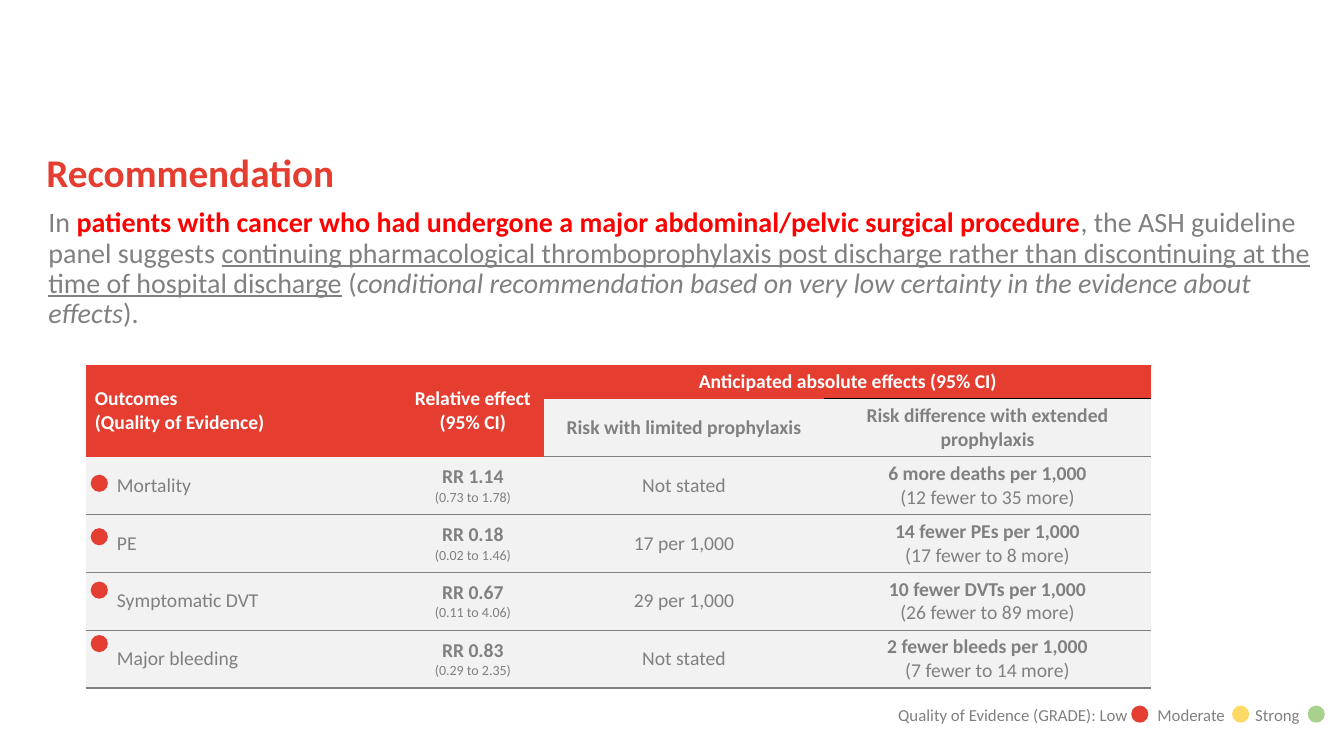
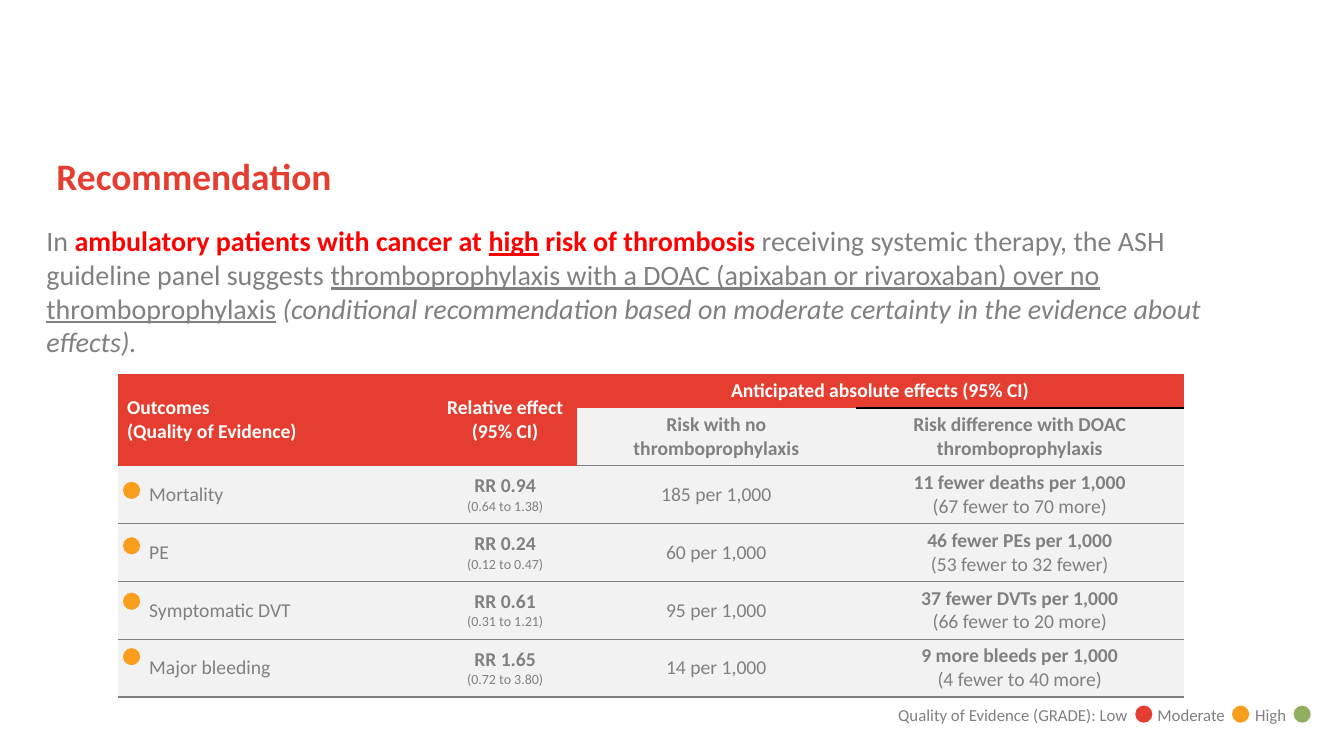
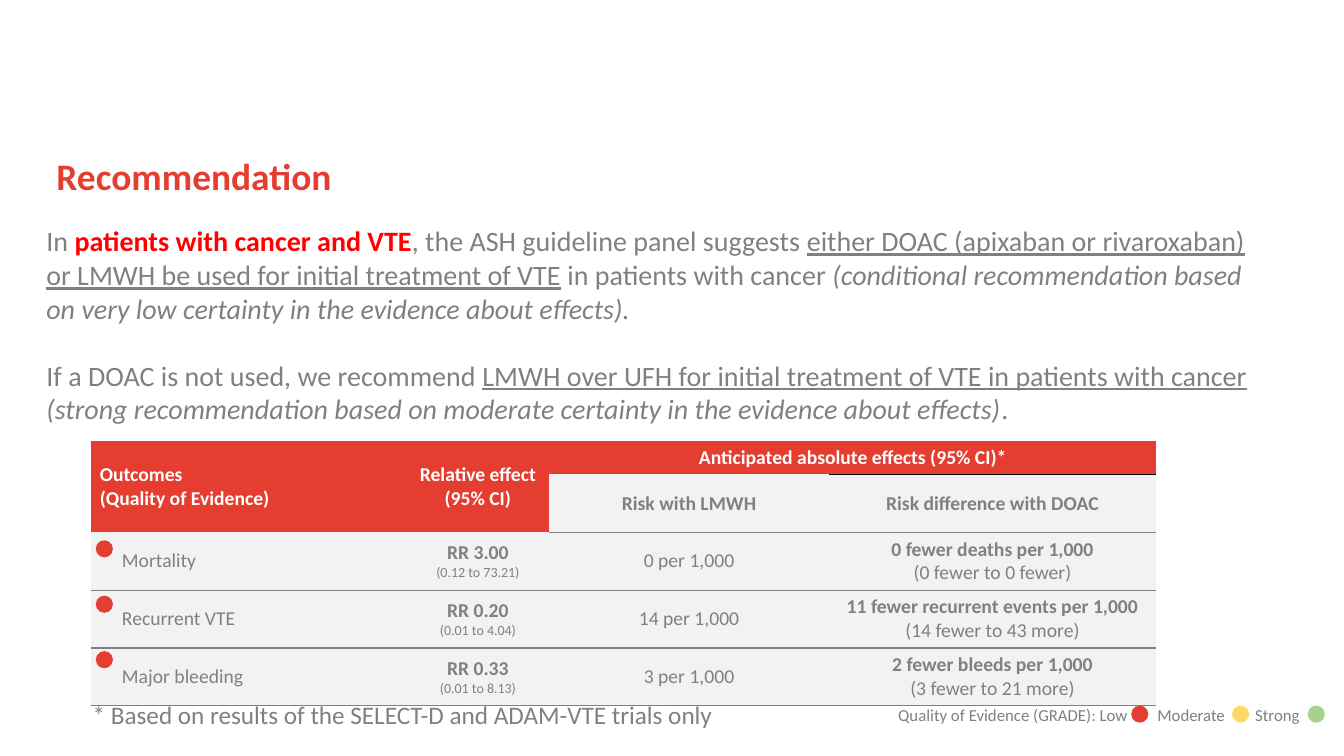
from lxml import etree
from pptx import Presentation
from pptx import util as u
from pptx.dml.color import RGBColor
from pptx.enum import shapes, text
from pptx.oxml.ns import qn

FONT = "Calibri"
RED, DOT_RED, GREY, PALE = "E53E31", "E43E32", "808080", "F2F2F2"
YELLOW, LIGHT_GREEN, ORANGE, GREEN = "FFD966", "A9D18E", "F99D1C", "91AF5F"
WHITE, BLACK = "FFFFFF", "000000"
NO_STYLE = "{2D5ABB26-0587-4C30-8999-92F81FD0307C}"
DOT = 0.17
COLUMNS = (3.13, 1.42, 2.77, 3.25)
HEADER_ROWS, OUTCOME_ROW = (0.33, 0.56), 0.56
LEFT, CENTER = text.PP_ALIGN.LEFT, text.PP_ALIGN.CENTER

# Emphasis used inside the recommendations
KEY = dict(color="FF0000", bold=True)
KEY_LINE = dict(KEY, underline=True)
LINE = dict(underline=True)
ITALIC = dict(italic=True)


def rgb(value):
    return RGBColor.from_string(value)


def add_span(para, words, size=14, color=GREY, bold=False, italic=False,
             underline=False):
    span = para.add_run()
    span.text = words
    font = span.font
    font.name, font.size, font.color.rgb = FONT, u.Pt(size), rgb(color)
    font.bold, font.italic, font.underline = bold, italic, underline


def add_border(cell, side, color):
    line = etree.SubElement(cell._tc.get_or_add_tcPr(), qn("a:ln" + side),
                            w=str(u.Pt(1)))
    fill = etree.SubElement(line, qn("a:solidFill"))
    etree.SubElement(fill, qn("a:srgbClr"), val=color)


class Deck:
    def __init__(self):
        self.deck = Presentation()
        self.deck.slide_width = u.Inches(13.33)
        self.deck.slide_height = u.Inches(7.5)
        self.page = None

    def add_page(self):
        self.page = self.deck.slides.add_slide(self.deck.slide_layouts[1])

    def place(self, holder, left, top, width, height, inset_x=0, inset_y=0):
        holder.left, holder.top = u.Inches(left), u.Inches(top)
        holder.width, holder.height = u.Inches(width), u.Inches(height)
        frame = holder.text_frame
        frame.word_wrap = True
        frame.auto_size = text.MSO_AUTO_SIZE.NONE
        frame.vertical_anchor = text.MSO_ANCHOR.TOP
        frame.margin_left = frame.margin_right = u.Inches(inset_x)
        frame.margin_top = frame.margin_bottom = u.Inches(inset_y)
        return frame

    def title(self, words, size, inset_x, inset_y):
        frame = self.place(self.page.shapes.title, 0.46, 1.47, 12, 0.78,
                           inset_x, inset_y)
        para = frame.paragraphs[0]
        para.alignment = LEFT
        add_span(para, words, size=size, color=RED, bold=True)

    def body(self, paragraphs, at, line_spacing):
        frame = self.place(self.page.placeholders[1], *at)
        for index, spans in enumerate(paragraphs):
            para = frame.paragraphs[0] if index == 0 else frame.add_paragraph()
            properties = para._p.get_or_add_pPr()
            properties.set("marL", "0")
            properties.set("indent", "0")
            etree.SubElement(properties, qn("a:buNone"))
            para.alignment = LEFT
            para.line_spacing = line_spacing
            para.space_before = u.Pt(24 if index else 0)
            for words, style in spans:
                add_span(para, words, size=20, **style)

    def label(self, words, at, size, tabs=()):
        box = self.page.shapes.add_textbox(0, 0, 0, 0)
        para = self.place(box, *at, inset_x=0.1, inset_y=0.05).paragraphs[0]
        if tabs:
            stops = etree.SubElement(para._p.get_or_add_pPr(), qn("a:tabLst"))
            for stop in tabs:
                etree.SubElement(stops, qn("a:tab"), pos=str(u.Inches(stop)),
                                 algn="l")
        add_span(para, words, size=size)

    def dot(self, left, top, color):
        circle = self.page.shapes.add_shape(
            shapes.MSO_SHAPE.OVAL, u.Inches(left), u.Inches(top),
            u.Inches(DOT), u.Inches(DOT))
        circle.shadow.inherit = False
        circle.fill.solid()
        circle.fill.fore_color.rgb = rgb(color)
        circle.line.fill.background()

    def legend(self, best, dots):
        self.label(f"Quality of Evidence (GRADE): Low\tModerate\t{best}",
                   (8.81, 6.94, 4.52, 0.3), 12, tabs=(2.57, 3.54))
        for left, color in dots:
            self.dot(left, 7, color)

    def cell(self, cell, lines, fill=PALE, align=CENTER, indent=0.09,
             top=None, bottom=None):
        """Fill one cell; lines holds (words, format) pairs."""
        for side, color in (("T", top), ("B", bottom)):
            if color:
                add_border(cell, side, color)
        cell.fill.solid()
        cell.fill.fore_color.rgb = rgb(fill)
        cell.vertical_anchor = text.MSO_ANCHOR.MIDDLE
        cell.margin_left, cell.margin_right = u.Inches(indent), u.Inches(0.09)
        cell.margin_top = cell.margin_bottom = u.Inches(0.05)
        frame = cell.text_frame
        for index, (words, style) in enumerate(lines):
            para = frame.paragraphs[0] if index == 0 else frame.add_paragraph()
            para.alignment = align
            add_span(para, words, **style)

    def evidence(self, left, top, effects, risk, difference, outcomes,
                 dot_top, dot_step, dot_color):
        heights = HEADER_ROWS + (OUTCOME_ROW,) * len(outcomes)
        table = self.page.shapes.add_table(
            len(heights), len(COLUMNS), u.Inches(left), u.Inches(top),
            u.Inches(sum(COLUMNS)), u.Inches(sum(heights))).table
        table.first_row = table.horz_banding = False
        table._tbl.tblPr[0].text = NO_STYLE
        for column, width in zip(table.columns, COLUMNS):
            column.width = u.Inches(width)
        for row, height in zip(table.rows, heights):
            row.height = u.Inches(height)

        # Two header rows with merged cells
        head, bold = dict(color=WHITE, bold=True), dict(bold=True)
        table.cell(0, 0).merge(table.cell(1, 0))
        table.cell(0, 1).merge(table.cell(1, 1))
        table.cell(0, 2).merge(table.cell(0, 3))
        self.cell(table.cell(0, 0), [("Outcomes", head),
                                     ("(Quality of Evidence)", head)],
                  fill=RED, align=LEFT)
        self.cell(table.cell(0, 1), [("Relative effect", head),
                                     ("(95% CI)", head)], fill=RED)
        self.cell(table.cell(0, 2), [(effects, head)], fill=RED)
        self.cell(table.cell(1, 2), [(risk, bold)], bottom=GREY)
        self.cell(table.cell(1, 3), [(difference, bold)], top=BLACK,
                  bottom=GREY)

        # One row and one quality dot per outcome
        for index, (name, ratio, interval, base, change, span) in enumerate(outcomes):
            contents = ([(name, {})],
                        [(ratio, bold), (interval, dict(size=10))],
                        [(base, {})],
                        [(change, bold), (span, {})])
            for column, lines in enumerate(contents):
                place = {} if column else dict(align=LEFT, indent=0.31)
                self.cell(table.cell(index + 2, column), lines,
                          top=GREY if index or column > 1 else None,
                          bottom=GREY, **place)
            self.dot(left + 0.05, dot_top + index * dot_step, dot_color)


EFFECTS = "Anticipated absolute effects (95% CI)"
STRONG_LEGEND = ("Strong", ((11.22, DOT_RED), (12.22, YELLOW),
                            (12.97, LIGHT_GREEN)))
HIGH_LEGEND = ("High", ((11.26, DOT_RED), (12.22, ORANGE), (12.83, GREEN)))
WIDE_BODY = (0.46, 2.22, 12, 4.32)


def main():
    deck = Deck()

    # Slide 1: prophylaxis after surgery
    deck.add_page()
    deck.title("Recommendation", 28, 0, 0)
    deck.body([[
        ("In ", {}),
        ("patients with cancer who had undergone a major abdominal/pelvic "
         "surgical procedure", KEY),
        (", the ASH guideline panel suggests ", {}),
        ("continuing pharmacological thromboprophylaxis post discharge rather "
         "than discontinuing at the time of hospital discharge", LINE),
        (" (", {}),
        ("conditional recommendation based on very low certainty in the "
         "evidence about effects", ITALIC),
        (").", {}),
    ]], (0.48, 2.07, 12.64, 1.69), 0.9)
    deck.legend(*STRONG_LEGEND)
    deck.evidence(0.85, 3.62, EFFECTS, "Risk with limited prophylaxis",
                  "Risk difference with extended prophylaxis", [
        ("Mortality", "RR 1.14", "(0.73 to 1.78)", "Not stated",
         "6 more deaths per 1,000", "(12 fewer to 35 more)"),
        ("PE", "RR 0.18", "(0.02 to 1.46)", "17 per 1,000",
         "14 fewer PEs per 1,000", "(17 fewer to 8 more)"),
        ("Symptomatic DVT", "RR 0.67", "(0.11 to 4.06)", "29 per 1,000",
         "10 fewer DVTs per 1,000", "(26 fewer to 89 more)"),
        ("Major bleeding", "RR 0.83", "(0.29 to 2.35)", "Not stated",
         "2 fewer bleeds per 1,000", "(7 fewer to 14 more)"),
    ], 4.71, 0.53, DOT_RED)

    # Slide 2: ambulatory patients at high risk
    deck.add_page()
    deck.title("Recommendation", 26.7, 0.1, 0.05)
    deck.body([[
        ("In ", {}),
        ("ambulatory patients with cancer at ", KEY),
        ("high", KEY_LINE),
        (" risk of thrombosis", KEY),
        (" receiving systemic therapy, the ASH guideline panel suggests ", {}),
        ("thromboprophylaxis with a DOAC (apixaban or rivaroxaban) over no "
         "thromboprophylaxis", LINE),
        (" ", {}),
        ("(conditional recommendation based on moderate certainty in the "
         "evidence about effects).", ITALIC),
    ]], WIDE_BODY, 1.0)
    deck.evidence(1.17, 3.71, EFFECTS, "Risk with no thromboprophylaxis",
                  "Risk difference with DOAC thromboprophylaxis", [
        ("Mortality", "RR 0.94", "(0.64 to 1.38)", "185 per 1,000",
         "11 fewer deaths per 1,000", "(67 fewer to 70 more)"),
        ("PE", "RR 0.24", "(0.12 to 0.47)", "60 per 1,000",
         "46 fewer PEs per 1,000", "(53 fewer to 32 fewer)"),
        ("Symptomatic DVT", "RR 0.61", "(0.31 to 1.21)", "95 per 1,000",
         "37 fewer DVTs per 1,000", "(66 fewer to 20 more)"),
        ("Major bleeding", "RR 1.65", "(0.72 to 3.80)", "14 per 1,000",
         "9 more bleeds per 1,000", "(4 fewer to 40 more)"),
    ], 4.78, 0.55, ORANGE)
    deck.legend(*HIGH_LEGEND)

    # Slide 3: initial treatment
    deck.add_page()
    deck.title("Recommendation", 26.7, 0.1, 0.05)
    deck.body([[
        ("In ", {}),
        ("patients with cancer and VTE", KEY),
        (", the ASH guideline panel suggests ", {}),
        ("either DOAC (apixaban or rivaroxaban) or LMWH be used for initial "
         "treatment of VTE", LINE),
        (" in patients with cancer ", {}),
        ("(conditional recommendation based on very low certainty in the "
         "evidence about effects).", ITALIC),
    ], [
        ("If a DOAC is not used, we recommend ", {}),
        ("LMWH over UFH for initial treatment of VTE in patients with cancer",
         LINE),
        (" ", {}),
        ("(strong recommendation based on moderate certainty in the evidence "
         "about effects)", ITALIC),
        (".", {}),
    ]], WIDE_BODY, 1.0)
    deck.legend(*STRONG_LEGEND)
    deck.evidence(0.9, 4.37, EFFECTS + "*", "Risk with LMWH",
                  "Risk difference with DOAC", [
        ("Mortality", "RR 3.00", "(0.12 to 73.21)", "0 per 1,000",
         "0 fewer deaths per 1,000", "(0 fewer to 0 fewer)"),
        ("Recurrent VTE", "RR 0.20", "(0.01 to 4.04)", "14 per 1,000",
         "11 fewer recurrent events per 1,000", "(14 fewer to 43 more)"),
        ("Major bleeding", "RR 0.33", "(0.01 to 8.13)", "3 per 1,000",
         "2 fewer bleeds per 1,000", "(3 fewer to 21 more)"),
    ], 5.36, 0.55, DOT_RED)
    deck.label("* Based on results of the SELECT-D and ADAM-VTE trials only",
               (0.82, 6.89, 6.42, 0.4), 18)

    deck.deck.save("out.pptx")


if __name__ == "__main__":
    main()
